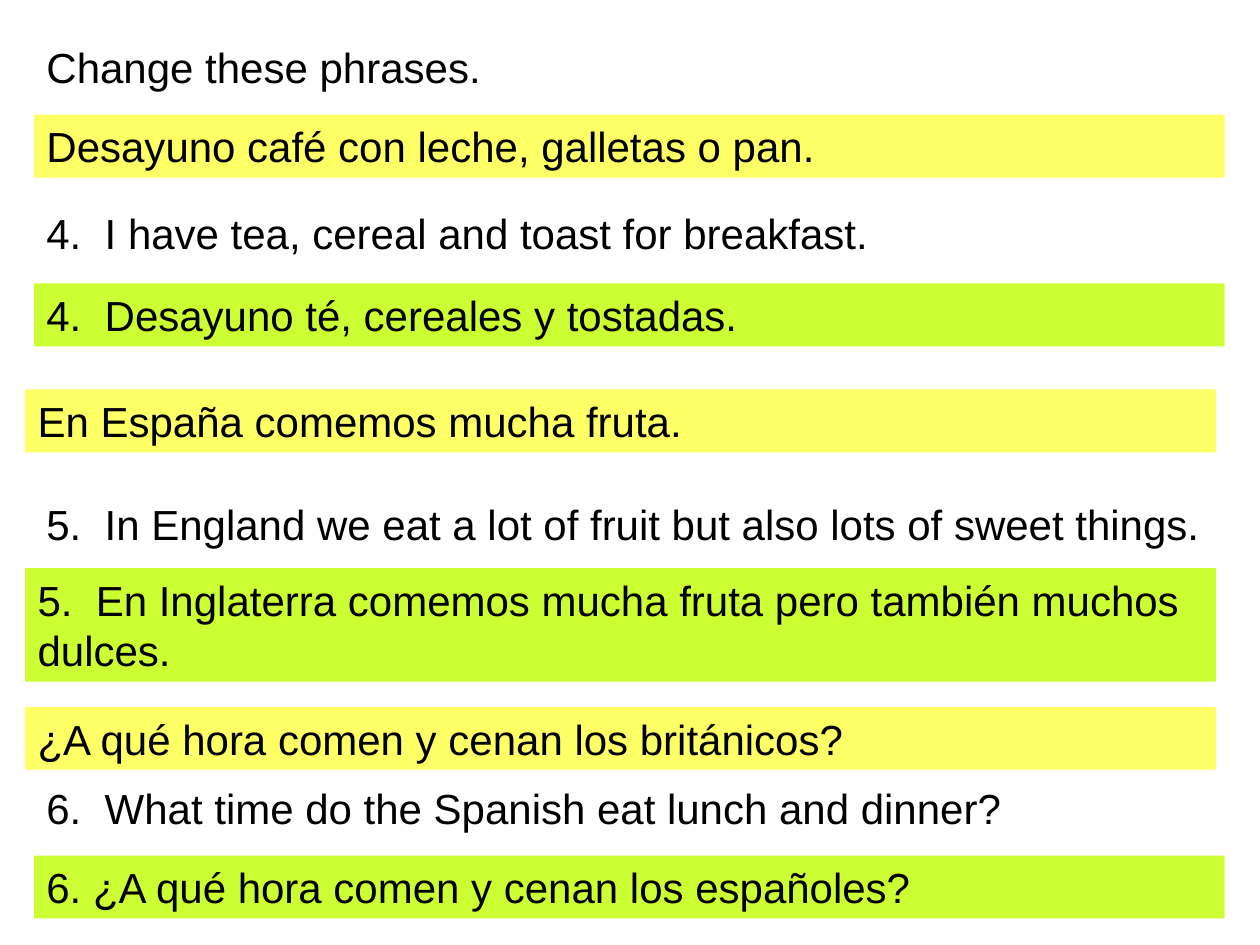
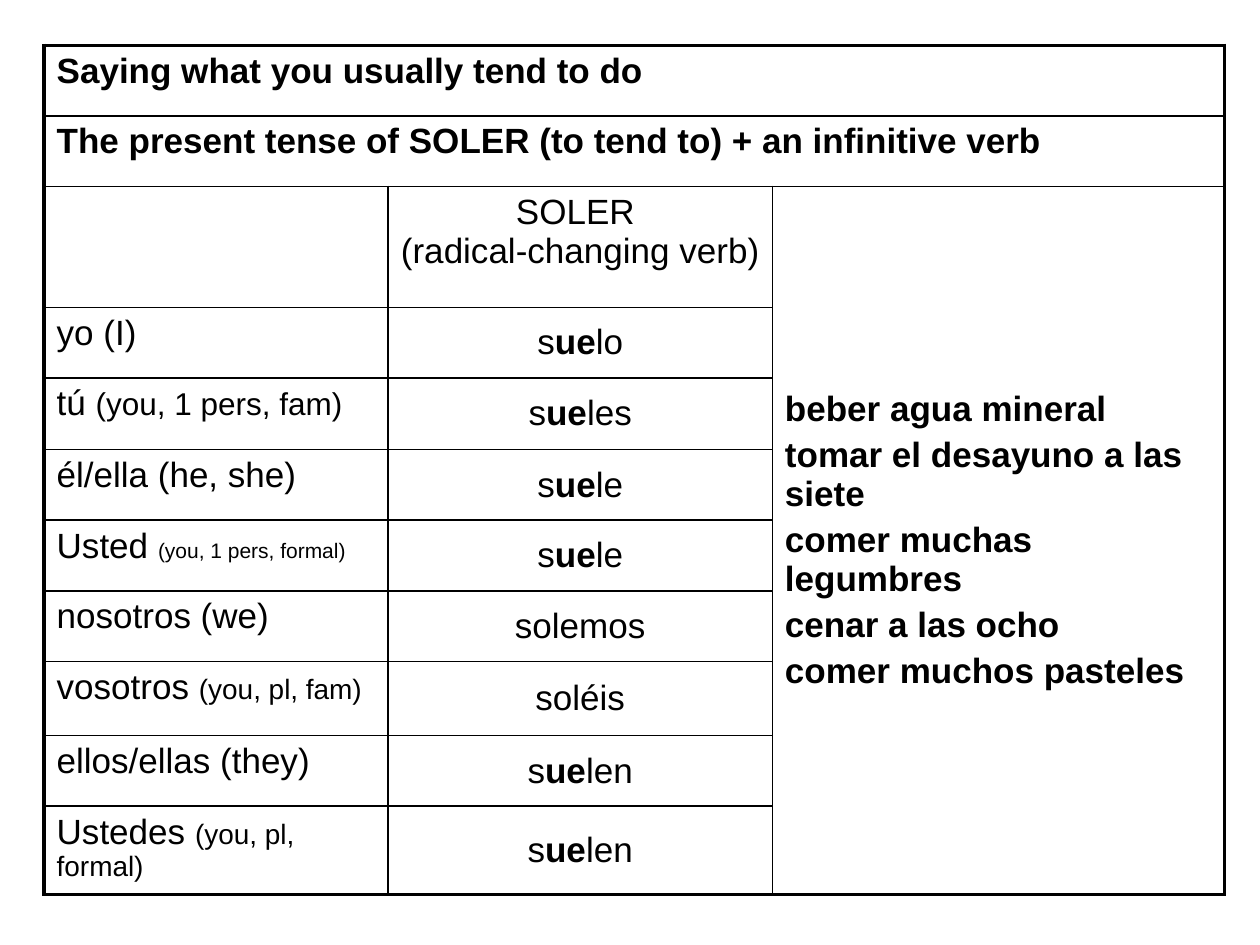
from lxml import etree
from pptx import Presentation
from pptx.dml.color import RGBColor
from pptx.enum.shapes import MSO_SHAPE
from pptx.enum.text import MSO_ANCHOR, MSO_AUTO_SIZE, PP_ALIGN
from pptx.oxml.ns import qn
from pptx.util import Emu, Pt

EMU_PER_PX = 9144  # 100 px to the inch
RECTANGLE = MSO_SHAPE.RECTANGLE
TOP, MIDDLE = MSO_ANCHOR.TOP, MSO_ANCHOR.MIDDLE
LEFT, CENTER = PP_ALIGN.LEFT, PP_ALIGN.CENTER
GROW = MSO_AUTO_SIZE.SHAPE_TO_FIT_TEXT

FONT = "Arial"
COLORS = {"ink": "000000", "example": "FFFF66", "answer": "CCFF33"}
PLAIN_STYLE = "{2D5ABB26-0587-4C30-8999-92F81FD0307C}"
OUTER_LINE, INNER_LINE = 2.25, 1
PHRASE_WIDTH, PHRASE_HEIGHT = 945, 50

# (left, top, height, band colour or None, text)
PHRASES = [
    (27, 28, 50, None, "Change these phrases."),
    (27, 91, 50, "example", "Desayuno café con leche, galletas o pan."),
    (27, 160, 50, None, "4.  I have tea, cereal and toast for breakfast."),
    (27, 225, 50, "answer", "4.  Desayuno té, cereales y tostadas."),
    (20, 309, 50, "example", "En España comemos mucha fruta."),
    (27, 391, 50, None,
     "5.  In England we eat a lot of fruit but also lots of sweet things."),
    (20, 451, 90, "answer",
     "5.  En Inglaterra comemos mucha fruta pero también muchos dulces."),
    (20, 561, 50, "example", "¿A qué hora comen y cenan los británicos?"),
    (27, 616, 50, None, "6.  What time do the Spanish eat lunch and dinner?"),
    (27, 679, 50, "answer", "6. ¿A qué hora comen y cenan los españoles?"),
]

HEADINGS = [
    "Saying what you usually tend to do",
    "The present tense of SOLER (to tend to) + an infinitive verb",
]
# (pronoun, size of its starred hint, verb form with starred stem change)
CONJUGATION = [
    ("yo (I)", 20, "s*ue*lo"),
    ("tú *(you, 1 pers, fam)", 18, "s*ue*les"),
    ("él/ella (he, she)", 20, "s*ue*le"),
    ("Usted *(you, 1 pers, formal)", 12, "s*ue*le"),
    ("nosotros (we)", 20, "solemos"),
    ("vosotros *(you, pl, fam)", 16, "soléis"),
    ("ellos/ellas (they)", 20, "s*ue*len"),
    ("Ustedes *(you, pl, formal)", 16, "s*ue*len"),
]
INFINITIVES = [
    "beber agua mineral",
    "tomar el desayuno a las siete",
    "comer muchas legumbres",
    "cenar a las ocho",
    "comer muchos pasteles",
]
COLUMN_WIDTHS = [273, 305, 359]
ROW_HEIGHTS = [56, 56, 96, 56, 57, 56, 56, 56, 59, 56, 57]


def px(length):
    return Emu(length * EMU_PER_PX)


def color(name):
    return RGBColor.from_string(COLORS[name])


def write(frame, *paragraphs, size=20, bold=False, align=LEFT, space=0.2,
          accent_size=None, accent_bold=None):
    """Fill a text frame; stars toggle the accent, newlines break the line."""
    frame.word_wrap = True
    for index, text in enumerate(paragraphs):
        paragraph = frame.add_paragraph() if index else frame.paragraphs[0]
        paragraph.alignment = align
        paragraph.space_before = Pt(size * space)
        for part, words in enumerate(text.split("*")):
            accented = part % 2 == 1
            for number, line in enumerate(words.split("\n")):
                if number:
                    paragraph.add_line_break()
                if not line:
                    continue
                run = paragraph.add_run()
                run.text = line
                run.font.name = FONT
                run.font.color.rgb = color("ink")
                run.font.size = Pt(accented and accent_size or size)
                run.font.bold = bool(accented and accent_bold or bold)


class Deck:
    def __init__(self, width, height):
        self.presentation = Presentation()
        self.presentation.slide_width = px(width)
        self.presentation.slide_height = px(height)
        self.slide = None

    def new_slide(self):
        blank = self.presentation.slide_layouts[6]
        self.slide = self.presentation.slides.add_slide(blank)

    def phrase(self, left, top, height, band, text):
        box = [px(length) for length in (left, top, PHRASE_WIDTH, height)]
        if band:
            phrase = self.slide.shapes.add_shape(RECTANGLE, *box)
            phrase.shadow.inherit = False
            phrase.fill.solid()
            phrase.fill.fore_color.rgb = color(band)
            phrase.line.fill.background()
        else:
            phrase = self.slide.shapes.add_textbox(*box)
        frame = phrase.text_frame
        frame.vertical_anchor = TOP
        write(frame, text, size=24, space=0.5)
        frame.auto_size = GROW

    def grid(self, left, top, widths, heights):
        holder = self.slide.shapes.add_table(
            len(heights), len(widths), px(left), px(top),
            px(sum(widths)), px(sum(heights)))
        table = holder.table
        table.first_row = table.horz_banding = False
        for style in holder._element.iter(qn("a:tableStyleId")):
            style.text = PLAIN_STYLE
        for column, width in zip(table.columns, widths):
            column.width = px(width)
        for row, height in zip(table.rows, heights):
            row.height = px(height)
        return table

    def rule_cells(self, table):
        """Draw a heavy frame with thin inner lines, following merged cells."""
        row_count, column_count = len(table.rows), len(table.columns)
        for row in range(row_count):
            for column in range(column_count):
                cell = table.cell(row, column)
                if not cell.is_spanned:
                    last_row = row + (cell.span_height if cell.is_merge_origin else 1)
                    last_column = column + (cell.span_width if cell.is_merge_origin else 1)
                    on_frame = {"L": column == 0, "R": last_column == column_count,
                                "T": row == 0, "B": last_row == row_count}
                    for side, outer in on_frame.items():
                        self.border(cell, side, OUTER_LINE if outer else INNER_LINE)
                cell.fill.background()

    def border(self, cell, side, points):
        properties = cell._tc.get_or_add_tcPr()
        line = etree.SubElement(properties, qn(f"a:ln{side}"), w=str(Pt(points)))
        fill = etree.SubElement(line, qn("a:solidFill"))
        etree.SubElement(fill, qn("a:srgbClr"), val=COLORS["ink"])


def build_phrases(deck):
    deck.new_slide()
    for phrase in PHRASES:
        deck.phrase(*phrase)


def build_soler(deck):
    deck.new_slide()
    table = deck.grid(35, 36, COLUMN_WIDTHS, ROW_HEIGHTS)
    verb_row = len(HEADINGS)
    for row, heading in enumerate(HEADINGS):
        table.cell(row, 0).merge(table.cell(row, 2))
        write(table.cell(row, 0).text_frame, heading, bold=True)

    write(table.cell(verb_row, 1).text_frame,
          "SOLER \n(radical-changing verb)", align=CENTER)

    infinitives = table.cell(verb_row, 2)
    infinitives.merge(table.cell(len(ROW_HEIGHTS) - 1, 2))
    infinitives.vertical_anchor = MIDDLE
    write(infinitives.text_frame, *INFINITIVES, bold=True)

    for row, (pronoun, hint_size, verb) in enumerate(CONJUGATION, verb_row + 1):
        write(table.cell(row, 0).text_frame, pronoun, accent_size=hint_size)
        verb_cell = table.cell(row, 1)
        verb_cell.vertical_anchor = MIDDLE
        write(verb_cell.text_frame, verb, align=CENTER, accent_bold=True)
    deck.rule_cells(table)


def main():
    deck = Deck(1000, 750)
    build_phrases(deck)
    build_soler(deck)
    deck.presentation.save("out.pptx")


if __name__ == "__main__":
    main()
